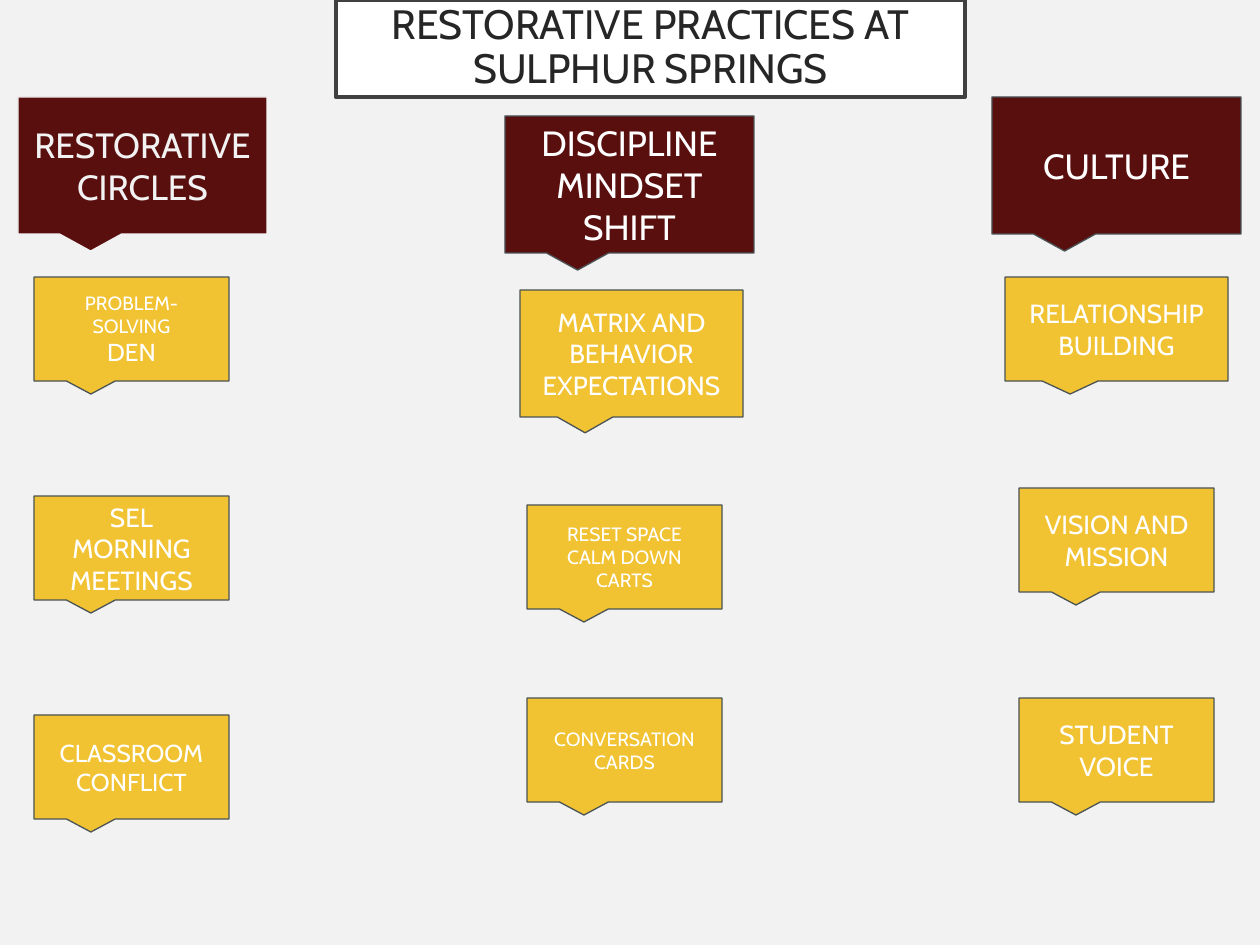
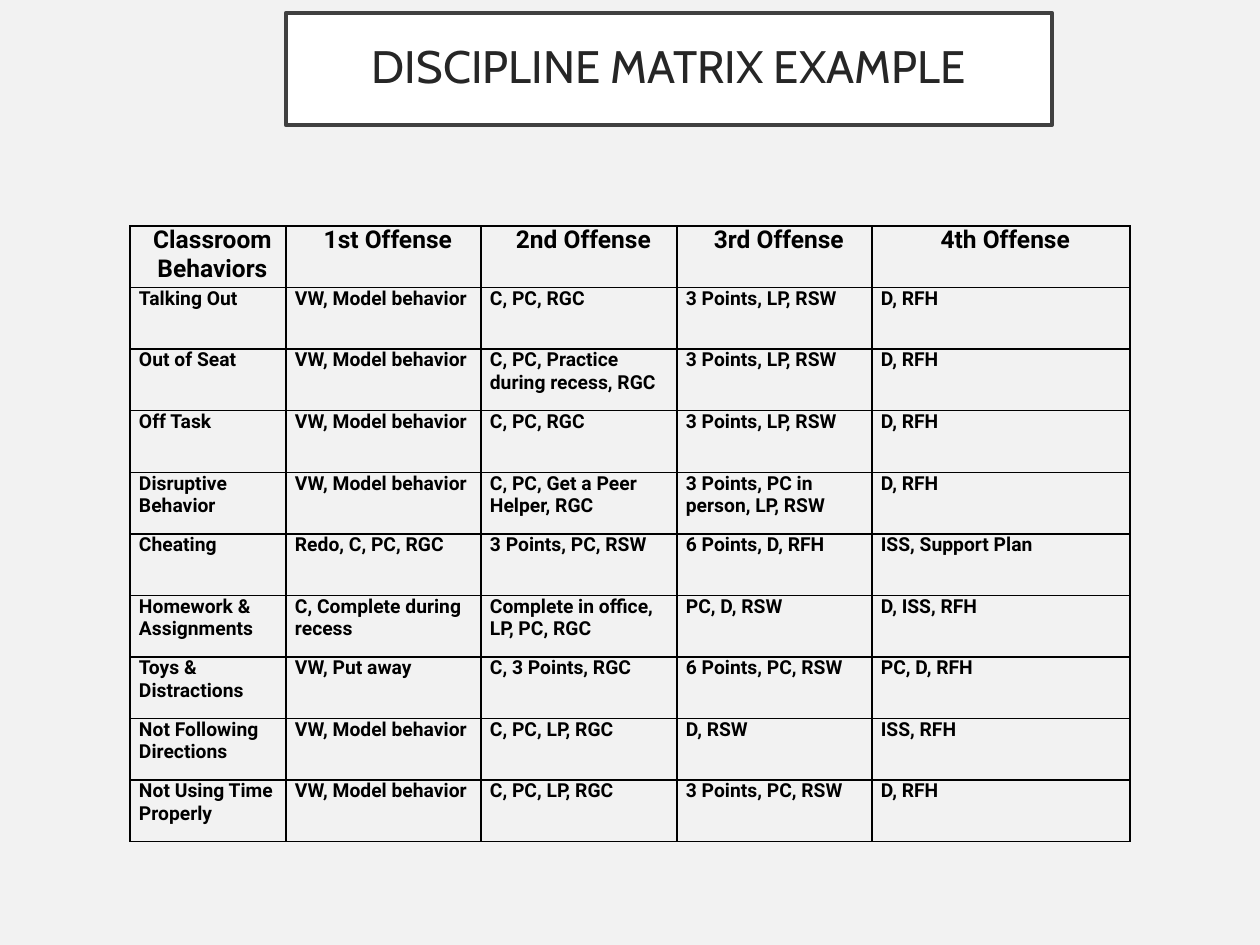
from dataclasses import dataclass

from lxml.etree import SubElement
from pptx import Presentation
from pptx.dml.color import RGBColor
from pptx.enum.shapes import MSO_SHAPE as Shape
from pptx.enum.text import MSO_ANCHOR as Anchor, PP_ALIGN as Align
from pptx.oxml.ns import qn
from pptx.util import Emu, Pt

EMU_PER_PX = 914400 / 126


def px(length):
    return Emu(round(length * EMU_PER_PX))


@dataclass(frozen=True)
class Theme:
    background: str = "F2F2F2"
    title_fill: str = "FFFFFF"
    title_line: str = "404040"
    title_text: str = "262626"
    heading_fill: str = "5A0F0F"
    practice_fill: str = "F1C232"
    callout_line: str = "4A5356"
    callout_text: str = "FFFFFF"
    table_ink: str = "000000"
    display_font: str = "Cabin"
    table_font: str = "Roboto"
    long_title_size: float = 23.4
    title_size: float = 26
    heading_size: float = 20
    practice_size: float = 15
    medium_size: float = 14
    small_size: float = 11
    table_head_size: float = 14
    table_body_size: float = 11
    title_line_width: float = 2.5
    callout_line_width: float = 0.75
    border_width: float = 1


class Deck:
    def __init__(self, theme):
        self.theme = theme
        self.presentation = Presentation()
        self.presentation.slide_width = px(1260)
        self.presentation.slide_height = px(945)
        self.slide = None

    def new_slide(self):
        self.slide = self.presentation.slides.add_slide(self.presentation.slide_layouts[6])
        fill = self.slide.background.fill
        fill.solid()
        fill.fore_color.rgb = RGBColor.from_string(self.theme.background)

    def add_text(self, paragraph, text, size, font, color, bold=False):
        run = paragraph.add_run()
        run.text = text
        run.font.size = Pt(size)
        run.font.name = font
        run.font.bold = bold
        run.font.color.rgb = RGBColor.from_string(color)

    def box(self, kind, bounds, fill, line, line_width, inset):
        shape = self.slide.shapes.add_shape(kind, *map(px, bounds))
        shape.shadow.inherit = False
        shape.fill.solid()
        shape.fill.fore_color.rgb = RGBColor.from_string(fill)
        shape.line.color.rgb = RGBColor.from_string(line)
        shape.line.width = Pt(line_width)
        frame = shape.text_frame
        frame.word_wrap = True
        frame.vertical_anchor = Anchor.MIDDLE
        frame.margin_left = frame.margin_right = px(inset)
        frame.margin_top = frame.margin_bottom = px(inset)
        return shape

    def add_lines(self, shape, lines, color):
        frame = shape.text_frame
        for index, (text, size) in enumerate(lines):
            paragraph = frame.add_paragraph() if index else frame.paragraphs[0]
            paragraph.alignment = Align.CENTER
            self.add_text(paragraph, text, size, self.theme.display_font, color)

    def title(self, bounds, text, size):
        theme = self.theme
        shape = self.box(Shape.RECTANGLE, bounds, theme.title_fill, theme.title_line,
                         theme.title_line_width, 25)
        self.add_lines(shape, [(text, size)], theme.title_text)
        shape.text_frame.paragraphs[0].line_spacing = 0.9

    def callout(self, bounds, lines, fill, line=None, color=None):
        theme = self.theme
        shape = self.box(Shape.RECTANGULAR_CALLOUT, bounds, fill, line or theme.callout_line,
                         theme.callout_line_width, 13)
        shape.adjustments[0] = -0.208
        shape.adjustments[1] = 0.625
        self.add_lines(shape, lines, color or theme.callout_text)

    def heading(self, left, top, texts, **colors):
        lines = [(text, self.theme.heading_size) for text in texts]
        self.callout((left, top, 249, 137), lines, self.theme.heading_fill, **colors)

    def practice(self, left, top, lines, width=195, height=104):
        self.callout((left, top, width, height), lines, self.theme.practice_fill)

    def border(self, cell):
        properties = cell._tc.get_or_add_tcPr()
        for side in ("a:lnL", "a:lnR", "a:lnT", "a:lnB"):
            line = SubElement(properties, qn(side), w=str(Pt(self.theme.border_width)))
            fill = SubElement(line, qn("a:solidFill"))
            SubElement(fill, qn("a:srgbClr"), val=self.theme.table_ink)

    def cell(self, cell, text, is_head):
        theme = self.theme
        cell.margin_left = cell.margin_right = cell.margin_top = cell.margin_bottom = 0
        self.border(cell)
        cell.fill.background()
        paragraph = cell.text_frame.paragraphs[0]
        paragraph.alignment = Align.CENTER if is_head else Align.LEFT
        paragraph.space_before = Pt(5)
        properties = paragraph._p.get_or_add_pPr()
        properties.set("marL", str(px(9)))
        properties.set("indent", "0")
        size = theme.table_head_size if is_head else theme.table_body_size
        self.add_text(paragraph, text, size, theme.table_font, theme.table_ink, bold=True)

    def table(self, left, top, widths, height, rows):
        frame = self.slide.shapes.add_table(len(rows), len(widths), px(left), px(top),
                                            px(sum(widths)), px(height))
        table = frame.table
        table.first_row = table.horz_banding = False
        for column, width in zip(table.columns, widths):
            column.width = px(width)
        for row_index, texts in enumerate(rows):
            table.rows[row_index].height = px(height / len(rows))
            for column_index, text in enumerate(texts):
                self.cell(table.cell(row_index, column_index), text, row_index == 0)


MATRIX = [
    ("Classroom Behaviors", "1st Offense", "2nd Offense", "3rd Offense", "4th Offense"),
    ("Talking Out", "VW, Model behavior", "C, PC, RGC", "3 Points, LP, RSW", "D, RFH"),
    ("Out of Seat", "VW, Model behavior", "C, PC, Practice during recess, RGC",
     "3 Points, LP, RSW", "D, RFH"),
    ("Off Task", "VW, Model behavior", "C, PC, RGC", "3 Points, LP, RSW", "D, RFH"),
    ("Disruptive Behavior", "VW, Model behavior", "C, PC, Get a Peer Helper, RGC",
     "3 Points, PC in person, LP, RSW", "D, RFH"),
    ("Cheating", "Redo, C, PC, RGC", "3 Points, PC, RSW", "6 Points, D, RFH",
     "ISS, Support Plan"),
    ("Homework & Assignments", "C, Complete during recess",
     "Complete in office, LP, PC, RGC", "PC, D, RSW", "D, ISS, RFH"),
    ("Toys & Distractions", "VW, Put away", "C, 3 Points, RGC", "6 Points, PC, RSW",
     "PC, D, RFH"),
    ("Not Following Directions", "VW, Model behavior", "C, PC, LP, RGC", "D, RSW",
     "ISS, RFH"),
    ("Not Using Time Properly", "VW, Model behavior", "C, PC, LP, RGC",
     "3 Points, PC, RSW", "D, RFH"),
]


def build_practices(deck):
    theme = deck.theme
    normal, medium, small = theme.practice_size, theme.medium_size, theme.small_size
    deck.new_slide()
    deck.title((336, 0, 629, 97), "RESTORATIVE PRACTICES AT SULPHUR SPRINGS",
               theme.long_title_size)

    deck.heading(18, 97, ["RESTORATIVE", "CIRCLES"],
                 line=theme.background, color=theme.background)
    circles = [
        [("PROBLEM-SOLVING", small), ("DEN", medium)],
        [("SEL", normal), ("MORNING", normal), ("MEETINGS", normal)],
        [("CLASSROOM CONFLICT", medium)],
    ]
    for index, lines in enumerate(circles):
        deck.practice(34, 277 + 219 * index, lines)

    deck.heading(505, 116, ["DISCIPLINE", "MINDSET SHIFT"])
    deck.practice(520, 290, [("MATRIX AND BEHAVIOR EXPECTATIONS", normal)], 223, 127)
    deck.practice(527, 505, [("RESET SPACE", small), ("CALM DOWN CARTS", small)])
    deck.practice(527, 698, [("CONVERSATION CARDS", small)])

    deck.heading(992, 97, ["CULTURE"])
    deck.practice(1005, 277, [("RELATIONSHIP BUILDING", normal)], 223)
    for index, text in enumerate(["VISION AND MISSION", "STUDENT VOICE"]):
        deck.practice(1019, 488 + 210 * index, [(text, normal)])


def build_matrix(deck):
    deck.new_slide()
    deck.title((286, 13, 766, 112), "DISCIPLINE MATRIX EXAMPLE", deck.theme.title_size)
    deck.table(130, 226, [156, 195, 196, 195, 258], 616, MATRIX)


def main():
    deck = Deck(Theme())
    build_practices(deck)
    build_matrix(deck)
    deck.presentation.save("out.pptx")


if __name__ == "__main__":
    main()
